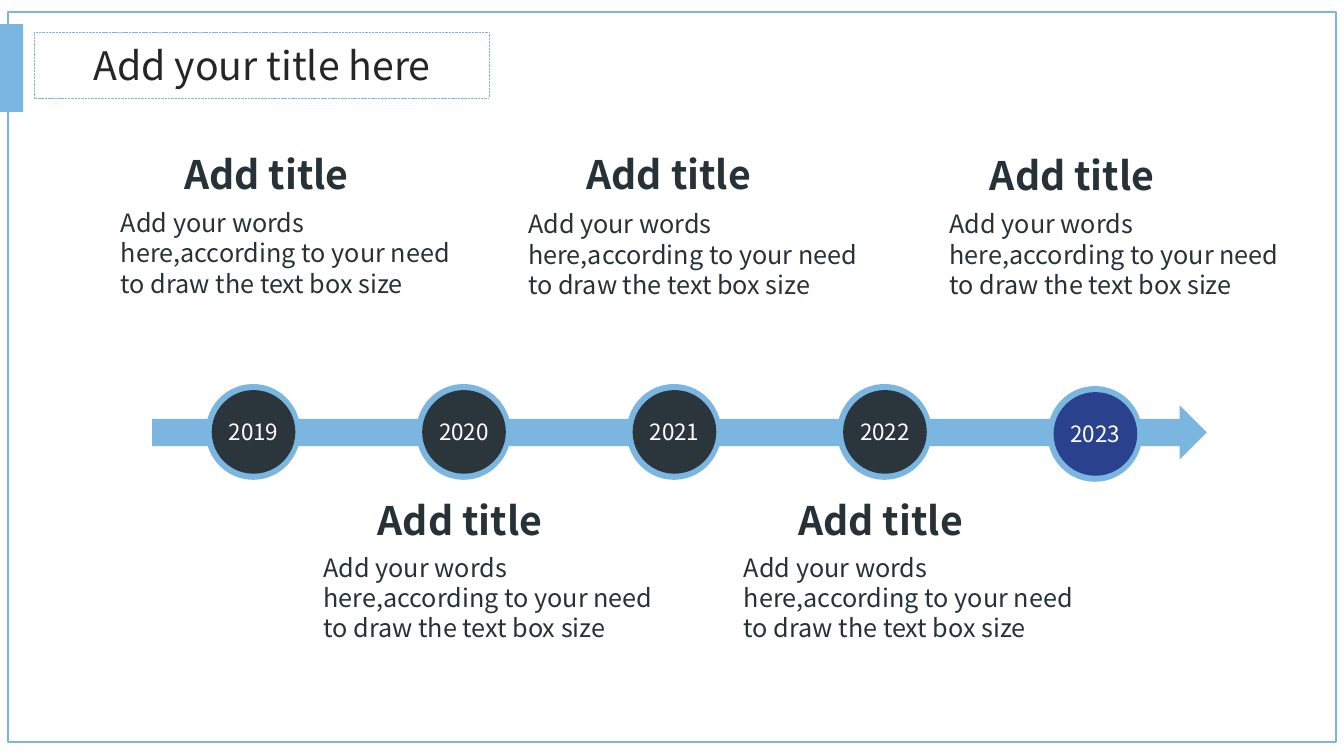
from pptx import Presentation
from pptx.dml.color import RGBColor as RGB
from pptx.enum.dml import MSO_LINE as Dash
from pptx.enum.shapes import MSO_SHAPE as Shape
from pptx.enum.text import MSO_ANCHOR as Anchor, MSO_AUTO_SIZE as Fit, PP_ALIGN as Align
from pptx.util import Inches as In, Pt

FONT = "Noto Sans CJK JP"
HUES = {"sky": "7BB6E1", "slate": "2B353C", "navy": "2A428D",
        "ink": "263238", "title": "262626", "white": "FFFFFF"}

deck = Presentation()
deck.slide_width, deck.slide_height = In(13.33), In(7.5)
slide = deck.slides.add_slide(deck.slide_layouts[6])


def draw(kind, x, y, w, h, fill=None, line=0):
    item = slide.shapes.add_shape(kind, In(x), In(y), In(w), In(h))
    item.shadow.inherit = False
    if fill:
        item.fill.solid()
        item.fill.fore_color.rgb = RGB.from_string(HUES[fill])
    else:
        item.fill.background()
    if line:
        item.line.color.rgb = RGB.from_string(HUES["sky"])
        item.line.width = Pt(line)
    else:
        item.line.fill.background()
    return item


def write(item, text, size, hue, align=Align.LEFT, bold=False, wrap=False):
    frame = item.text_frame
    frame.word_wrap = wrap
    frame.auto_size = Fit.SHAPE_TO_FIT_TEXT
    para = frame.paragraphs[0]
    para.text, para.alignment = text, align
    font = para.font
    font.name, font.size, font.bold = FONT, Pt(size), bold
    font.color.rgb = RGB.from_string(HUES[hue])
    return frame


# Timeline: arrow and evenly spaced years, the last one highlighted
draw(Shape.RIGHT_ARROW, 1.51, 4.02, 10.46, 0.54, "sky")
left, step, rim = 2.04, 2.0875, 0.06
for col in range(5):
    last = col == 4
    x, y = left + col * step, 3.83 if last else 3.81
    draw(Shape.OVAL, x, y, 0.94, 0.95, "sky")
    disc = draw(Shape.OVAL, x + rim, y + rim, 0.83, 0.83, "navy" if last else "slate")
    frame = write(disc, str(2019 + col), 16, "white", Align.CENTER, wrap=True)
    frame.auto_size = Fit.NONE
    frame.vertical_anchor = Anchor.MIDDLE
    frame.margin_left = frame.margin_right = frame.margin_top = frame.margin_bottom = 0

# Captions: heading left and top, body left, top and width
notes = [
    (1.73, 1.44, 1.10, 2.01, 3.58),
    (5.72, 1.44, 5.14, 2.02, 3.72),
    (9.72, 1.45, 9.32, 2.02, 3.65),
    (3.65, 4.87, 3.11, 5.43, 3.59),
    (7.82, 4.87, 7.28, 5.43, 3.70),
]
words = "Add your words here,according to your need to draw the text box size"
for hx, hy, bx, by, bw in notes:
    head = slide.shapes.add_textbox(In(hx), In(hy), In(1.9), In(0.57))
    write(head, "Add title", 28, "ink", bold=True)
    body = slide.shapes.add_textbox(In(bx), In(by), In(bw), In(1.01))
    write(body, words, 18, "ink", wrap=True)

# Slide title in a dashed box
box = draw(Shape.RECTANGLE, 0.34, 0.32, 4.51, 0.65, "white", 0.25)
box.line.dash_style = Dash.SQUARE_DOT
title = draw(Shape.RECTANGLE, 0.75, 0.36, 3.7, 0.57, "white")
write(title, "Add your title here", 28, "title", Align.CENTER)

# Side tab and page frame
draw(Shape.RECTANGLE, 0, 0.24, 0.23, 0.87, "sky")
draw(Shape.RECTANGLE, 0.08, 0.12, 13.17, 7.24, line=1)

deck.save("out.pptx")
